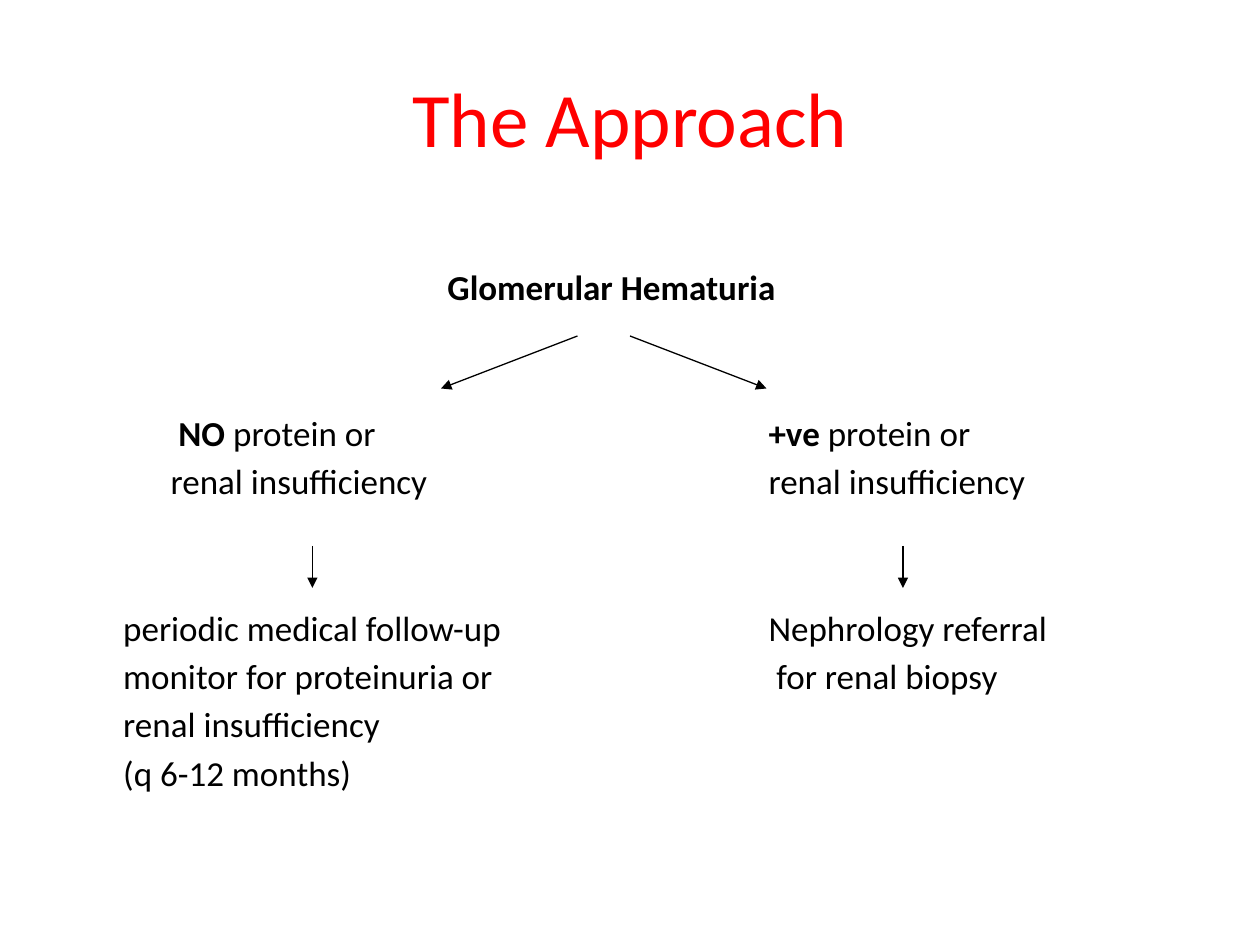
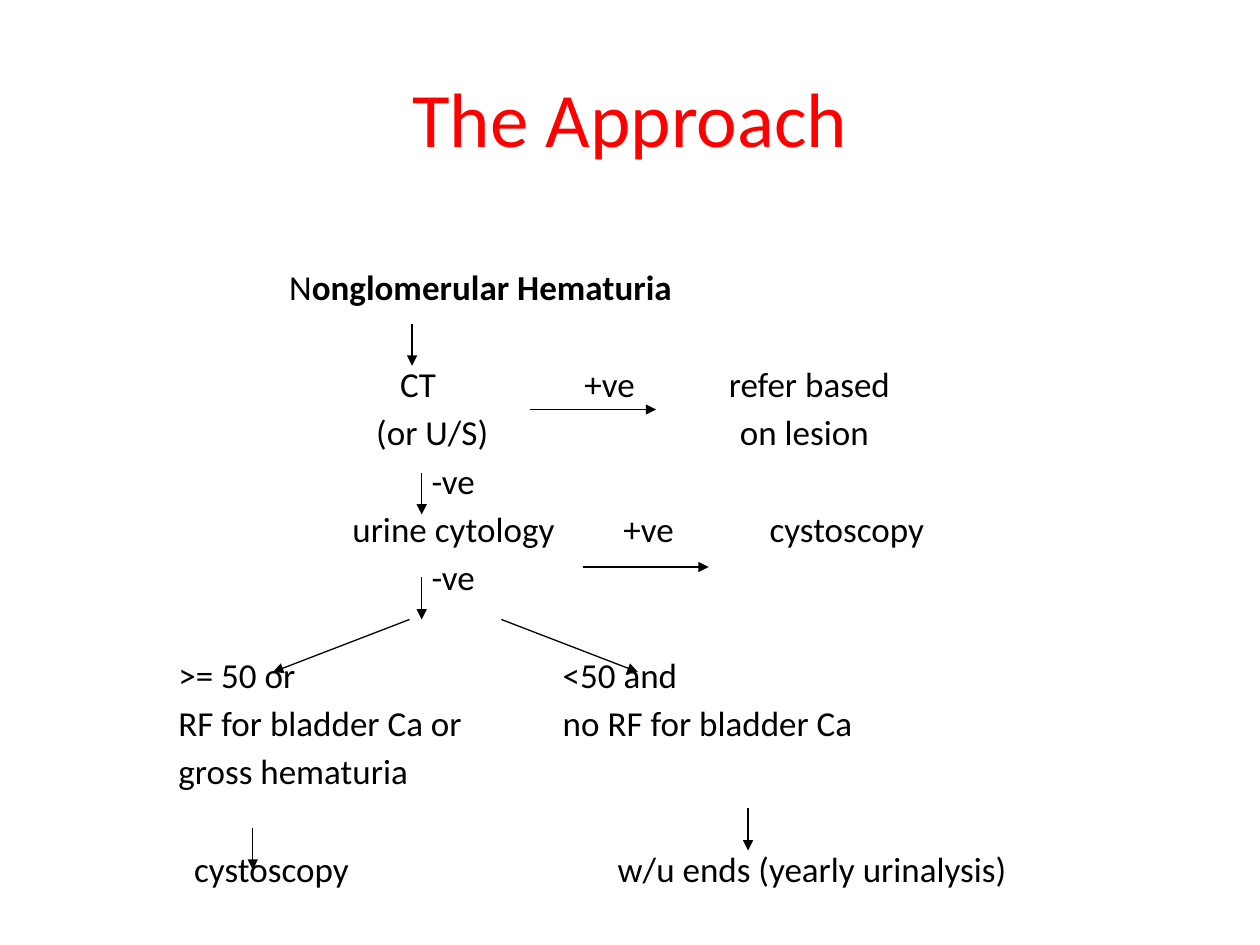
from lxml.etree import SubElement
from pptx import Presentation
from pptx.dml.color import RGBColor
from pptx.enum.shapes import MSO_CONNECTOR
from pptx.enum.text import MSO_ANCHOR, PP_ALIGN
from pptx.oxml.ns import qn
from pptx.util import Pt

RED = RGBColor(0xFF, 0x00, 0x00)
BLACK = RGBColor(0x00, 0x00, 0x00)
FONT = "Calibri"
TITLE_SIZE, BODY_SIZE = 44, 20
ROW_PITCH, ROW_GAP = 28, 3.6
DOWN, RIGHT = (0, 24), (72, 0)
FORK_LEFT, FORK_RIGHT = (-78, 30), (78, 30)
TITLE_BOX = (36, 21.6, 648, 90)
CHART_BOX = (0, 148, 720, 392)

# Each row is (row number, cells); each cell is (left, text, bold) pieces.
GLOMERULAR_ROWS = [
    (0, [(255.7, [("Glomerular Hematuria", True)])]),
    (3, [(102, [("NO ", True), ("protein or", False)]),
         (439.2, [("+ve", True), (" protein or", False)])]),
    (4, [(97.5, [("renal insufficiency", False)]),
         (439.2, [("renal insufficiency", False)])]),
    (7, [(70.4, [("periodic medical follow-up", False)]),
         (439.2, [("Nephrology referral", False)])]),
    (8, [(70.4, [("monitor for proteinuria or", False)]),
         (443.7, [("for renal biopsy", False)])]),
    (9, [(70.4, [("renal insufficiency", False)])]),
    (10, [(70.4, [("(q 6-12 months)", False)])]),
]
GLOMERULAR_ARROWS = [
    (330, 44, FORK_LEFT), (360, 44, FORK_RIGHT),
    (178.5, 164, DOWN), (516, 164, DOWN),
]
NONGLOMERULAR_ROWS = [
    (0, [(165.3, [("N", False), ("onglomerular Hematuria", True)])]),
    (2, [(228.6, [("CT", False)]), (334, [("+ve", False)]),
         (416.5, [("refer based", False)])]),
    (3, [(215, [("(or U/S)", False)]), (422.8, [("on lesion", False)])]),
    (4, [(246.6, [("-ve", False)])]),
    (5, [(201.4, [("urine cytology", False)]), (356.3, [("+ve", False)]),
         (439.8, [("cystoscopy", False)])]),
    (6, [(246.6, [("-ve", False)])]),
    (8, [(102, [(">= 50 or", False)]), (321.6, [("<50 and", False)])]),
    (9, [(102, [("RF for bladder Ca or", False)]),
         (321.6, [("no RF for bladder Ca", False)])]),
    (10, [(102, [("gross hematuria", False)])]),
    (12, [(111, [("cystoscopy", False)]),
          (353, [("w/u ends (yearly urinalysis)", False)])]),
]
NONGLOMERULAR_ARROWS = [
    (303, 86, RIGHT), (241, 122, DOWN), (235.5, 37, DOWN),
    (333, 176, RIGHT), (241, 182, DOWN),
    (234, 206, FORK_LEFT), (286.5, 206, FORK_RIGHT),
    (144.5, 325, DOWN), (427.5, 314, DOWN),
]


def add_text(paragraph, text, size, color, bold=False):
    """Add one styled run to a paragraph."""
    run = paragraph.add_run()
    run.text = text
    run.font.name = FONT
    run.font.size = Pt(size)
    run.font.bold = bold
    run.font.color.rgb = color


def add_frame(slide, box):
    """Add a wrapping text frame that fills the box."""
    frame = slide.shapes.add_textbox(*map(Pt, box)).text_frame
    frame.word_wrap = True
    return frame


def add_title(slide, box, wording):
    """Place the centred slide title in the box."""
    title = add_frame(slide, box)
    title.vertical_anchor = MSO_ANCHOR.MIDDLE
    heading = title.paragraphs[0]
    heading.alignment = PP_ALIGN.CENTER
    add_text(heading, wording, TITLE_SIZE, RED)


def add_rows(slide, box, rows):
    """Set rows of tab-aligned wording, leaving room for skipped rows."""
    body = add_frame(slide, box)
    body.margin_left = body.margin_right = 0
    previous = None
    for number, cells in rows:
        if previous is None:
            line = body.paragraphs[0]
        else:
            line = body.add_paragraph()
            skipped = number - previous - 1
            line.space_before = Pt(ROW_GAP + skipped * ROW_PITCH)
        previous = number
        stops = SubElement(line._p.get_or_add_pPr(), qn("a:tabLst"))
        for left, pieces in cells:
            SubElement(stops, qn("a:tab"), pos=str(Pt(left)), algn="l")
            for index, (wording, bold) in enumerate(pieces):
                lead = "\t" if index == 0 else ""
                add_text(line, lead + wording, BODY_SIZE, BLACK, bold)


def add_arrow(slide, box, x, y, reach):
    """Draw an arrow from a point in the box along the given reach."""
    left, top = box[0] + x, box[1] + y
    arrow = slide.shapes.add_connector(
        MSO_CONNECTOR.STRAIGHT,
        Pt(left), Pt(top), Pt(left + reach[0]), Pt(top + reach[1]))
    arrow.line.color.rgb = BLACK
    arrow.line.width = Pt(0.75)
    SubElement(arrow.line._get_or_add_ln(), qn("a:tailEnd"), type="triangle")
    SubElement(arrow._element.spPr, qn("a:effectLst"))


def add_approach_slide(deck, rows, arrows):
    """Build one decision-tree slide."""
    slide = deck.slides.add_slide(deck.slide_layouts[6])
    add_title(slide, TITLE_BOX, "The Approach")
    add_rows(slide, CHART_BOX, rows)
    for x, y, reach in arrows:
        add_arrow(slide, CHART_BOX, x, y, reach)


def main():
    """Build and save the deck."""
    deck = Presentation()
    deck.slide_width, deck.slide_height = Pt(720), Pt(540)
    add_approach_slide(deck, GLOMERULAR_ROWS, GLOMERULAR_ARROWS)
    add_approach_slide(deck, NONGLOMERULAR_ROWS, NONGLOMERULAR_ARROWS)
    deck.save("out.pptx")


if __name__ == "__main__":
    main()
